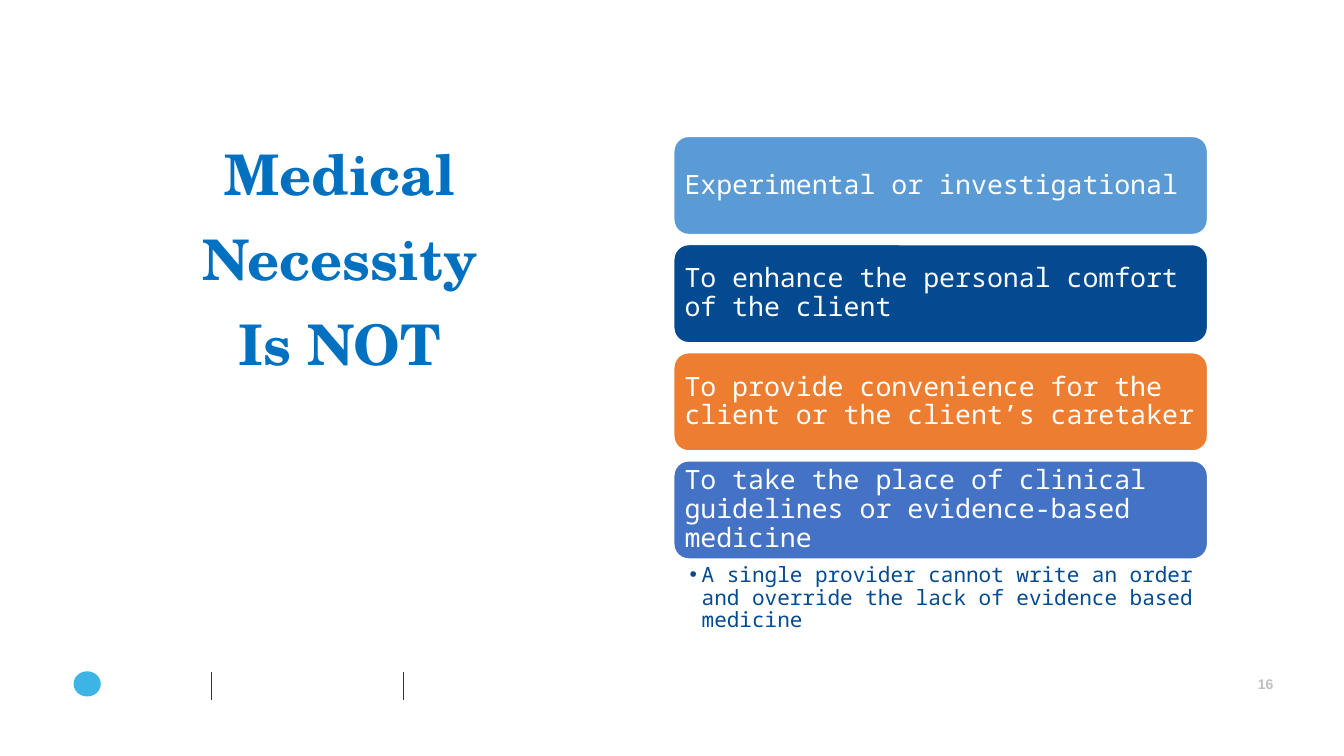
"""Build the slide listing what medical necessity is not."""
import pptx
import pptx.dml.color
import pptx.enum.shapes
import pptx.enum.text
import pptx.oxml.ns
import pptx.util
from lxml import etree

Inches = pptx.util.Inches
Pt = pptx.util.Pt
PP_ALIGN = pptx.enum.text.PP_ALIGN
MSO_ANCHOR = pptx.enum.text.MSO_ANCHOR
ROUNDED = pptx.enum.shapes.MSO_SHAPE.ROUNDED_RECTANGLE
qn = pptx.oxml.ns.qn


def color(hex_text):
    return pptx.dml.color.RGBColor.from_string(hex_text)


def style(frame, font_name, size, font_color, margins, spacing=1.0, bold=False):
    frame.word_wrap = True
    frame.margin_left, frame.margin_top, frame.margin_right, frame.margin_bottom = (
        Inches(margin) for margin in margins)
    for paragraph in frame.paragraphs:
        paragraph.line_spacing = spacing
        paragraph.font.name = font_name
        paragraph.font.size = Pt(size)
        paragraph.font.bold = bold
        paragraph.font.color.rgb = color(font_color)


deck = pptx.Presentation()
deck.slide_width = Inches(13.33)
deck.slide_height = Inches(7.5)
slide = deck.slides.add_slide(deck.slide_layouts[6])
shapes = slide.shapes

logo_place = shapes.add_shape(
    pptx.enum.shapes.MSO_SHAPE.OVAL, Inches(0.73), Inches(6.66), Inches(0.27), Inches(0.25))
logo_place.shadow.inherit = False
logo_place.fill.solid()
logo_place.fill.fore_color.rgb = color("3CB4E5")
logo_place.line.fill.background()

page_number = shapes.add_textbox(Inches(12.07), Inches(6.7), Inches(0.56), Inches(0.17)).text_frame
page_number.text = "16"
style(page_number, "Arial", 10, "BFBFBF", (0, 0, 0, 0), bold=True)
page_number.paragraphs[0].alignment = PP_ALIGN.RIGHT

for divider_x in (2.1, 4):
    divider = shapes.add_connector(
        pptx.enum.shapes.MSO_CONNECTOR.STRAIGHT,
        Inches(divider_x), Inches(6.67), Inches(divider_x), Inches(6.94))
    divider.line.color.rgb = color("333637")
    divider.line.width = Pt(0.5)
    etree.SubElement(divider._element.spPr, qn("a:effectLst"))

title = shapes.add_textbox(Inches(0.7), Inches(1.29), Inches(5.5), Inches(4)).text_frame
title.text = "Medical \nNecessity \nIs NOT "
style(title, "TeX Gyre Schola", 40, "0070C0", (0, 0, 0, 0), 1.14, bold=True)
for title_line in title.paragraphs:
    title_line.alignment = PP_ALIGN.CENTER
    title_line.space_after = Pt(6)

exclusions = [
    ("Experimental or investigational", "5B9BD5"),
    ("To enhance the personal comfort of the client", "034A90"),
    ("To provide convenience for the client or the client’s caretaker", "ED7D31"),
    ("To take the place of clinical guidelines or evidence-based medicine", "4472C4"),
]
for index, (exclusion, card_color) in enumerate(exclusions):
    card = shapes.add_shape(
        ROUNDED, Inches(6.66), Inches(1.33 + 1.073 * index), Inches(5.34), Inches(1.02))
    card.shadow.inherit = False
    card.fill.solid()
    card.fill.fore_color.rgb = color(card_color)
    card.line.color.rgb = color("FFFFFF")
    card.line.width = Pt(4.33)
    card.text_frame.text = exclusion
    card.text_frame.vertical_anchor = MSO_ANCHOR.MIDDLE
    style(card.text_frame, "Noto Sans Mono", 19, "FFFFFF", (0.08, 0.08, 0.08, 0.08), 0.9)
    card.text_frame.paragraphs[0].alignment = PP_ALIGN.LEFT

detail = shapes.add_textbox(Inches(6.67), Inches(5.57), Inches(5.34), Inches(0.63)).text_frame
detail.text = ("A single provider cannot write an order and override "
               "the lack of evidence based medicine")
detail_properties = detail.paragraphs[0]._p.get_or_add_pPr()
detail_properties.set("marL", str(Inches(0.12)))
detail_properties.set("indent", str(-Inches(0.12)))
etree.SubElement(detail_properties, qn("a:buFont")).set("typeface", "Arial")
etree.SubElement(detail_properties, qn("a:buChar")).set("char", "•")
style(detail, "Noto Sans Mono", 15, "034A90", (0.17, 0.03, 0.15, 0.03), 0.9)
detail.paragraphs[0].level = 1

deck.save("out.pptx")
